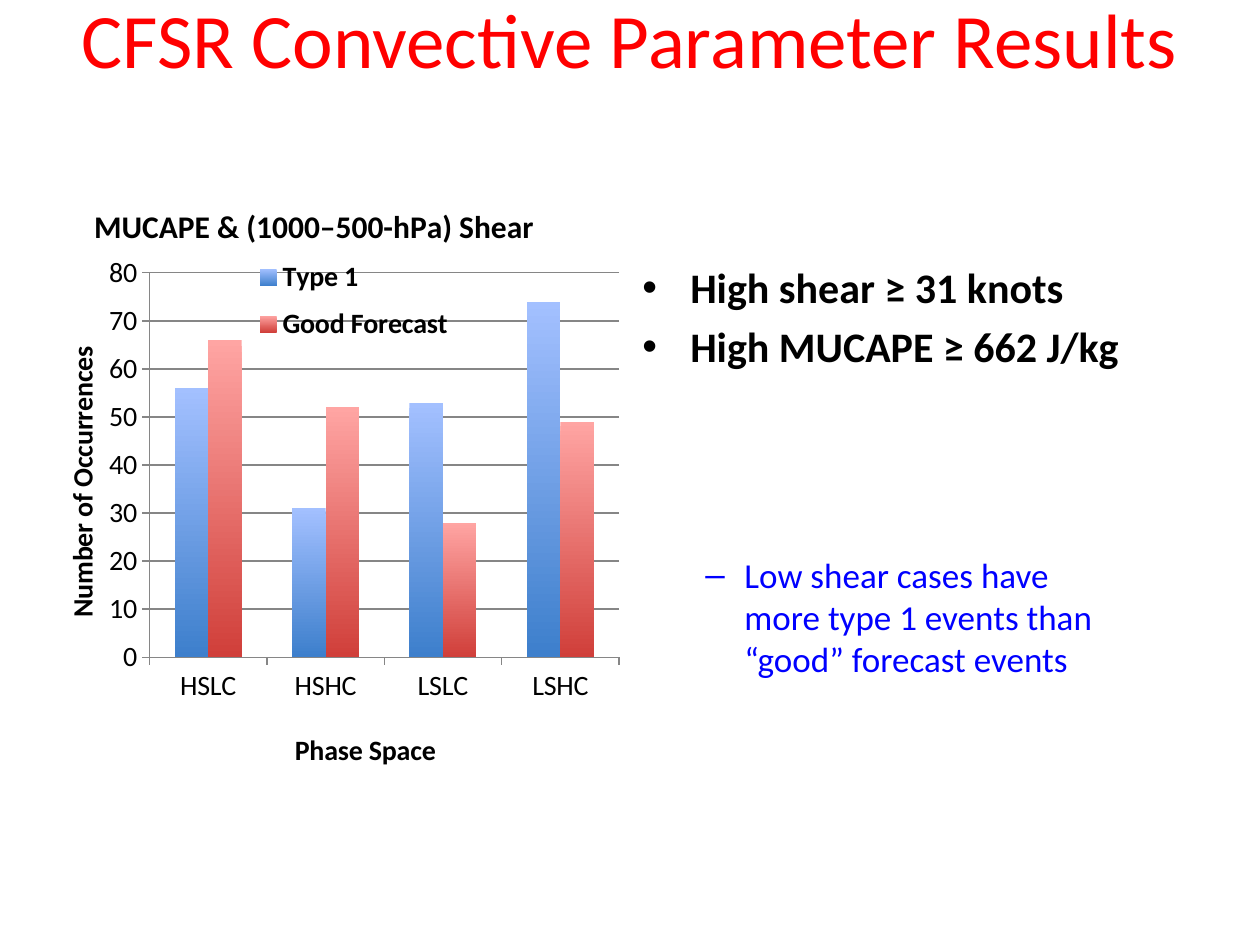
import pptx
import pptx.chart.data
import pptx.dml.color
import pptx.enum.chart
import pptx.enum.text
import pptx.oxml
import pptx.oxml.ns
import pptx.util

Inches = pptx.util.Inches
Pt = pptx.util.Pt
qn = pptx.oxml.ns.qn
decl = pptx.oxml.ns.nsdecls
hues = {"black": "000000", "red": "FF0000", "blue": "0000FF", "grid": "868686"}
fades = [("A3C0FF", "3D7FCC"), ("FFA5A3", "D03F3A")]


def style(font, size, hue="black", bold=False):
    for key, val in {"name": "Calibri", "size": Pt(size), "bold": bold}.items():
        setattr(font, key, val)
    font.color.rgb = pptx.dml.color.RGBColor.from_string(hues[hue])


def place(part, index, inner=False, **spots):
    """Give a chart part a manual layout, in fractions of the chart."""
    for old in part.findall(qn("c:layout")):
        part.remove(old)
    tags = '<c:layoutTarget val="inner"/>' if inner else ""
    tags += "".join(f'<c:{key}Mode val="edge"/>' for key in spots if key in "xy")
    tags += "".join(f'<c:{key} val="{val}"/>' for key, val in spots.items())
    part.insert(index, pptx.oxml.parse_xml(
        f'<c:layout {decl("c")}>'
        f"<c:manualLayout>{tags}</c:manualLayout></c:layout>"))


deck = pptx.Presentation()
deck.slide_width, deck.slide_height = Inches(10), Inches(7.5)
slide = deck.slides.add_slide(deck.slide_layouts[6])

# Chart
data = pptx.chart.data.CategoryChartData()
data.categories = ["HSLC", "HSHC", "LSLC", "LSHC"]
data.add_series("Type 1", (56, 31, 53, 74))
data.add_series("Good Forecast", (66, 52, 28, 49))
chart = slide.shapes.add_chart(
    pptx.enum.chart.XL_CHART_TYPE.COLUMN_CLUSTERED,
    Inches(0.17), Inches(1.33), Inches(4.84), Inches(4.92), data).chart
style(chart.font, 16)

plot = chart.plots[0]
for key, val in {"gap_width": 150, "overlap": 0, "vary_by_categories": False}.items():
    setattr(plot, key, val)
for series, fade in zip(plot.series, fades):
    fill = series.format.fill
    fill.gradient()
    fill.gradient_angle = 270
    for stop, hue in zip(fill.gradient_stops, fade):
        stop.color.rgb = pptx.dml.color.RGBColor.from_string(hue)

cat, val = chart.category_axis, chart.value_axis
for key, num in {"minimum_scale": 0, "maximum_scale": 80, "major_unit": 10}.items():
    setattr(val, key, num)
val.has_major_gridlines = True
for line in (cat.format.line, val.format.line, val.major_gridlines.format.line):
    line.width = Pt(0.75)
    line.color.rgb = pptx.dml.color.RGBColor.from_string(hues["grid"])
for axis in (cat, val):
    axis.major_tick_mark = pptx.enum.chart.XL_TICK_MARK.OUTSIDE
    style(axis.tick_labels.font, 16)

for title, text, size, x, y in [
    (chart.chart_title, "MUCAPE & (1000–500-hPa) Shear", 18, 0.11, 0.05),
    (cat.axis_title, "Phase Space", 16, 0.44, 0.9),
    (val.axis_title, "Number of Occurrences", 16, 0.06, 0.28),
]:
    title.text_frame.text = text
    style(title.text_frame.paragraphs[0].runs[0].font, size, bold=True)
    place(title._element, 1, x=x, y=y)

chart.has_legend = True
legend = chart.legend
legend.position = pptx.enum.chart.XL_LEGEND_POSITION.LEFT
legend.include_in_layout = True
style(legend.font, 16, bold=True)
place(legend._element, 1, x=0.37, y=0.13, w=0.35, h=0.17)
place(chart._chartSpace.chart.plotArea, 0, inner=True, x=0.21, y=0.17, w=0.77, h=0.62)

# Findings
box = slide.shapes.add_textbox(Inches(5), Inches(2.03), Inches(4.01), Inches(3.55))
box.text_frame.word_wrap = True
for i, (text, mark, left, hang, gap, size, hue, bold) in enumerate([
    ("High shear ≥ 31 knots", "•", 0.38, 0.38, 0, 24, "black", True),
    ("High MUCAPE ≥ 662 J/kg", "•", 0.38, 0.38, 4.8, 24, "black", True),
    ("Low shear cases have more type 1 events than “good” forecast events",
     "–", 0.81, 0.31, 104, 20, "blue", False),
]):
    para = box.text_frame.paragraphs[0] if i == 0 else box.text_frame.add_paragraph()
    props = para._p.get_or_add_pPr()
    props.set("marL", str(Inches(left)))
    props.set("indent", str(-Inches(hang)))
    if gap:
        para.space_before = Pt(gap)
    for tag, key, word in [("a:buFont", "typeface", "Arial"), ("a:buChar", "char", mark)]:
        bullet = pptx.oxml.parse_xml(f'<{tag} {decl("a")}/>')
        bullet.set(key, word)
        props.append(bullet)
    run = para.add_run()
    run.text = text
    style(run.font, size, hue, bold)

# Heading
head = slide.shapes.add_textbox(Inches(0.46), Inches(-0.33), Inches(9.08), Inches(1.25))
frame = head.text_frame
frame.word_wrap = True
frame.vertical_anchor = pptx.enum.text.MSO_ANCHOR.MIDDLE
para = frame.paragraphs[0]
para.alignment = pptx.enum.text.PP_ALIGN.CENTER
run = para.add_run()
run.text = "CFSR Convective Parameter Results"
style(run.font, 44, "red")

deck.save("out.pptx")
